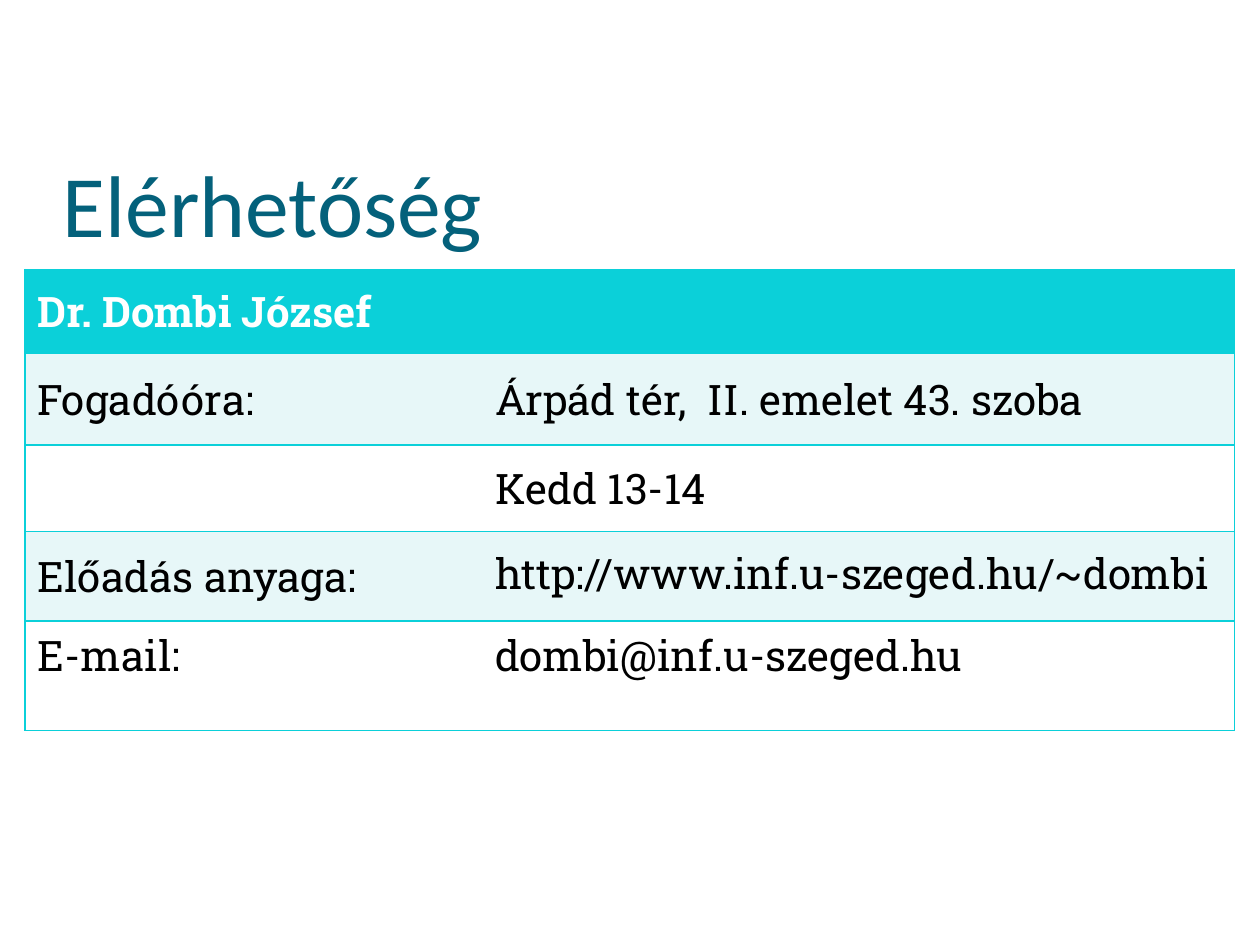
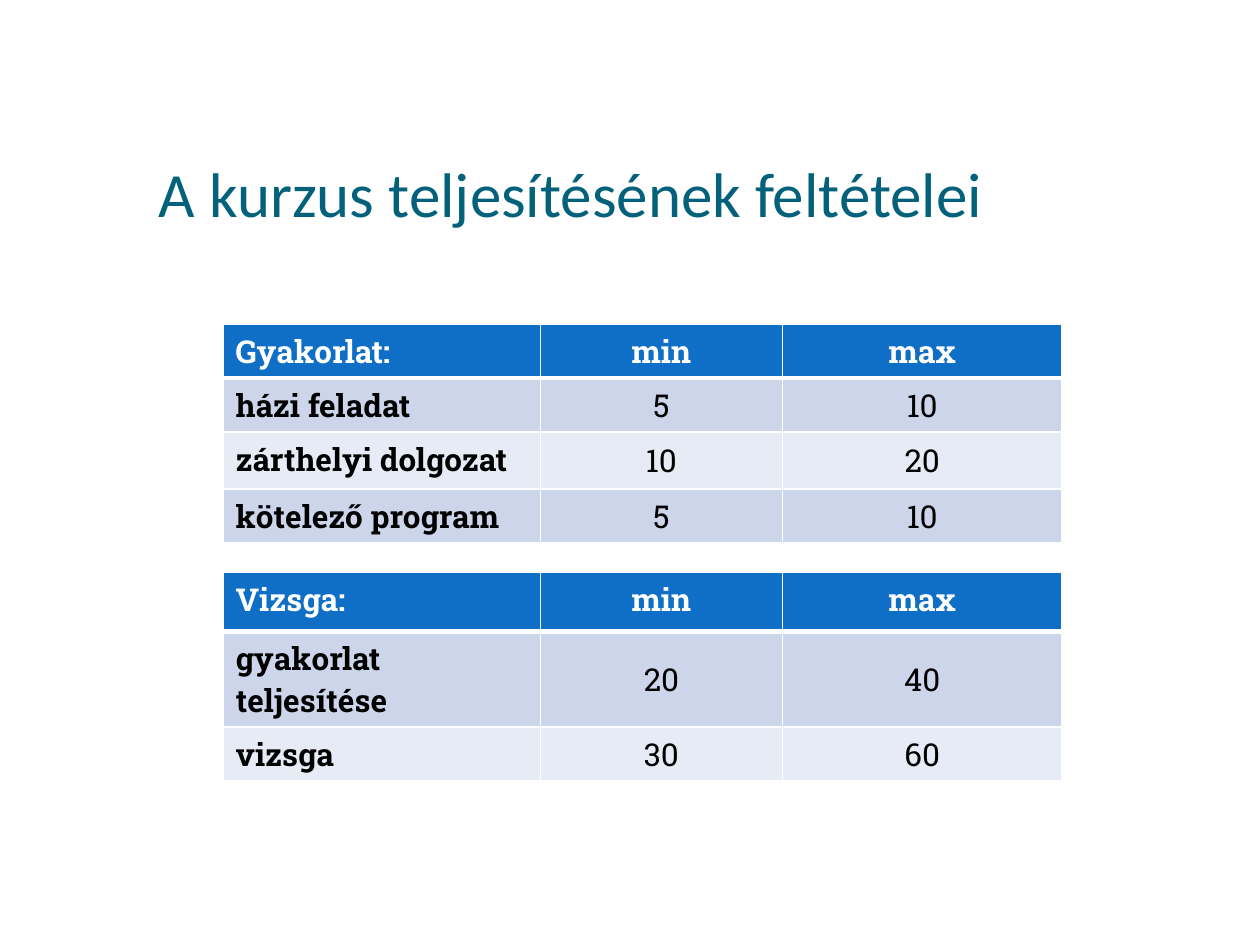
from dataclasses import dataclass

from lxml.etree import SubElement
from pptx import Presentation
from pptx.dml.color import RGBColor
from pptx.enum.text import MSO_ANCHOR, PP_ALIGN
from pptx.oxml.ns import qn
from pptx.util import Inches, Pt


@dataclass(frozen=True)
class Theme:
    title_font: str = "Calibri"
    body_font: str = "Roboto Slab"
    title: str = "04617B"
    text: str = "000000"
    white: str = "FFFFFF"
    cyan: str = "0BD0D9"
    cyan_light: str = "E7F7F8"
    blue: str = "0F6FC6"
    blue_mid: str = "CCD5EA"
    blue_light: str = "E7EBF5"
    title_large: int = 50
    title_small: int = 36
    contact_size: int = 24
    score_size: int = 18


class Deck:
    def __init__(self, theme):
        self.theme = theme
        self.prs = Presentation()
        self.prs.slide_width = Inches(10)
        self.prs.slide_height = Inches(7.5)
        self.s = None

    def slide(self):
        self.s = self.prs.slides.add_slide(self.prs.slide_layouts[6])

    def run(self, p, text, font, size, color, bold=False):
        r = p.add_run()
        r.text = text
        r.font.name = font
        r.font.size = Pt(size)
        r.font.bold = bold
        r.font.color.rgb = RGBColor.from_string(color)

    def title(self, text, left, top, width, height, size):
        sp = self.s.shapes.add_textbox(
            Inches(left), Inches(top), Inches(width), Inches(height))
        tf = sp.text_frame
        tf.word_wrap = True
        tf.vertical_anchor = MSO_ANCHOR.BOTTOM
        tf.margin_left = tf.margin_right = tf.margin_bottom = 0
        tf.margin_top = Inches(0.05)
        self.run(tf.paragraphs[0], text, self.theme.title_font, size, self.theme.title)

    def table(self, left, top, widths, heights):
        frame = self.s.shapes.add_table(
            len(heights), len(widths), Inches(left), Inches(top),
            Inches(sum(widths)), Inches(sum(heights)))
        table = frame.table
        table.first_row = table.horz_banding = False
        for column, width in zip(table.columns, widths):
            column.width = Inches(width)
        for row, height in zip(table.rows, heights):
            row.height = Inches(height)
        return table

    def cell(self, cell, text, size, color, fill, bold=False,
             align=PP_ALIGN.LEFT, anchor=MSO_ANCHOR.MIDDLE):
        cell.fill.solid()
        cell.fill.fore_color.rgb = RGBColor.from_string(fill)
        cell.vertical_anchor = anchor
        p = cell.text_frame.paragraphs[0]
        p.alignment = align
        if text:
            self.run(p, text, self.theme.body_font, size, color, bold)
        return p

    def borders(self, cell, color, left=1, right=1, top=1, bottom=1):
        tc_pr = cell._tc.get_or_add_tcPr()
        sides = {"L": left, "R": right, "T": top, "B": bottom}
        for i, (side, width) in enumerate(sides.items()):
            ln = SubElement(tc_pr, qn(f"a:ln{side}"), w=str(Pt(width)))
            if width:
                fill = SubElement(ln, qn("a:solidFill"))
                SubElement(fill, qn("a:srgbClr"), val=color)
            else:
                SubElement(ln, qn("a:noFill"))
            tc_pr.insert(i, ln)

    def contact_table(self, left, top, widths, heights, rows):
        t = self.theme
        table = self.table(left, top, widths, heights)
        for i, row in enumerate(rows):
            header = i == 0
            fill = t.cyan if header else (t.white, t.cyan_light)[i % 2]
            color = t.white if header else t.text
            anchor = MSO_ANCHOR.TOP if i == len(rows) - 1 else MSO_ANCHOR.MIDDLE
            for j, text in enumerate(row):
                cell = table.cell(i, j)
                p = self.cell(cell, text, t.contact_size, color, fill, header, anchor=anchor)
                if text.startswith("http"):
                    p.line_spacing = 0.8
                self.borders(cell, t.cyan, left=int(j == 0), right=int(j == 1))

    def score_table(self, left, top, widths, heights, rows):
        t = self.theme
        table = self.table(left, top, widths, heights)
        for i, row in enumerate(rows):
            header = i == 0
            fill = t.blue if header else (t.blue_light, t.blue_mid)[i % 2]
            color = t.white if header else t.text
            for j, text in enumerate(row):
                cell = table.cell(i, j)
                label = j == 0
                self.cell(cell, text, t.score_size, color, fill, header or label,
                          PP_ALIGN.LEFT if label else PP_ALIGN.CENTER,
                          MSO_ANCHOR.TOP if header or label else MSO_ANCHOR.MIDDLE)
                self.borders(cell, t.white, top=3 if i == 1 else 1,
                             bottom=3 if header else 1)


def main():
    theme = Theme()
    deck = Deck(theme)

    deck.slide()
    deck.title("Elérhetőség", 0.5, 0.77, 9, 1.25, theme.title_large)
    deck.contact_table(0.2, 2.14, [3.63, 5.97], [0.66, 0.73, 0.69, 0.71, 0.87], [
        ("Dr. Dombi József", ""),
        ("Fogadóóra:", "Árpád tér,  II. emelet 43. szoba"),
        ("", "Kedd 13-14"),
        ("Előadás anyaga:", "http://www.inf.u-szeged.hu/~dombi"),
        ("E-mail:", "dombi@inf.u-szeged.hu"),
    ])

    deck.slide()
    deck.title("A kurzus teljesítésének feltételei", 1.26, 0.68, 8.52, 1.15,
               theme.title_small)
    score_widths = [2.52, 1.92, 2.22]
    deck.score_table(1.77, 2.57, score_widths, [0.43, 0.43, 0.45, 0.43], [
        ("Gyakorlat:", "min", "max"),
        ("házi feladat", "5", "10"),
        ("zárthelyi dolgozat", "10", "20"),
        ("kötelező program", "5", "10"),
    ])
    deck.score_table(1.77, 4.54, score_widths, [0.47, 0.76, 0.43], [
        ("Vizsga:", "min", "max"),
        ("gyakorlat teljesítése", "20", "40"),
        ("vizsga", "30", "60"),
    ])

    deck.prs.save("out.pptx")


if __name__ == "__main__":
    main()
